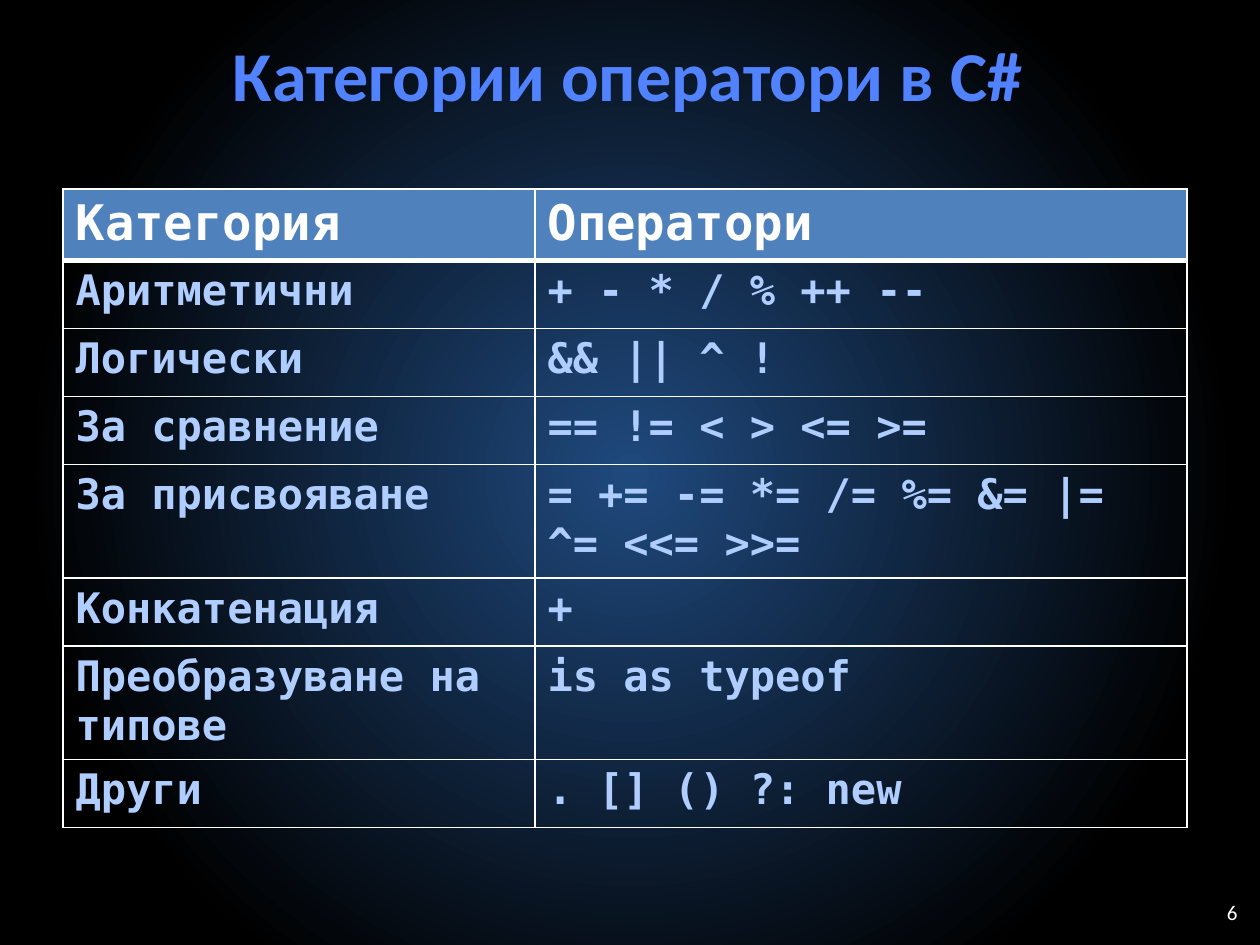
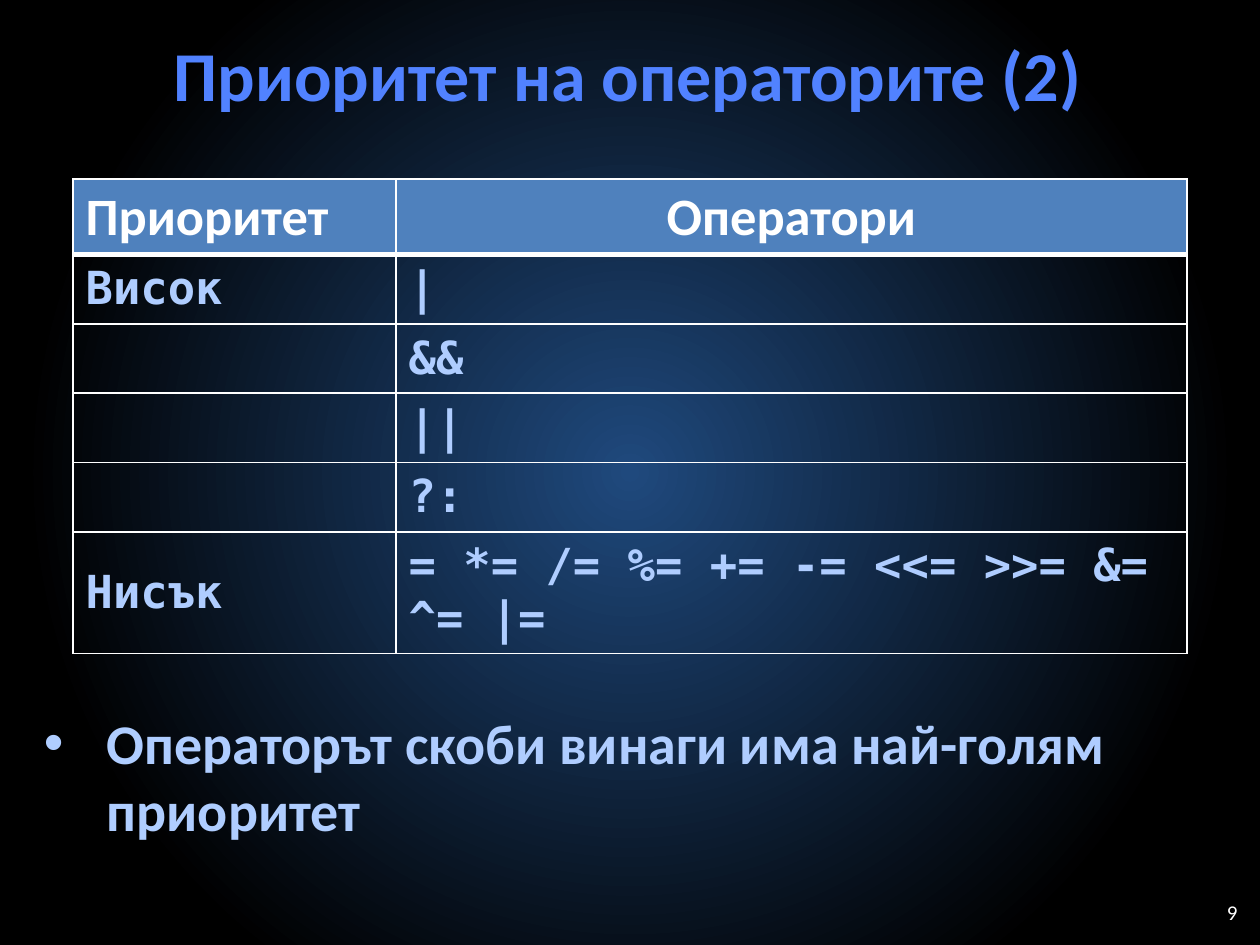
from lxml import etree
from pptx import Presentation
from pptx import util as u
from pptx.dml.color import RGBColor
from pptx.enum import text
from pptx.oxml.ns import qn

WIDTH, HEIGHT = 10, 7.5
COLOURS = {
    "glow": "1F497D", "edge": "000000", "title": "5182FF",
    "body": "AFCDFF", "white": "FFFFFF", "header": "4F81BD",
}
SANS, MONO = "Calibri", "DejaVu Sans Mono"
TITLE_ONLY = 5
LEFT, CENTRE, RIGHT = text.PP_ALIGN.LEFT, text.PP_ALIGN.CENTER, text.PP_ALIGN.RIGHT
TOP, MIDDLE = text.MSO_ANCHOR.TOP, text.MSO_ANCHOR.MIDDLE

# Boxes: left, top, width, height in inches
TITLE_BOX = (0.25, 0.17, 9.46, 0.83)
NUMBER_BOX = (9.5, 7.08, 0.42, 0.32)
NOTE_BOX = (0.25, 5.58, 9.46, 1.58)

CATEGORIES = [
    ("Категория", "Оператори"),
    ("Аритметични", "+ - * / % ++ --"),
    ("Логически", "&& || ^ !"),
    ("За сравнение", "== != < > <= >="),
    ("За присвояване", "= += -= *= /= %= &= |= ^= <<= >>="),
    ("Конкатенация", "+"),
    ("Преобразуване на типове", "is as typeof"),
    ("Други", ". [] () ?: new"),
]
PRIORITIES = [
    ("Приоритет", "Оператори"),
    ("Висок", "|"),
    ("", "&&"),
    ("", "||"),
    ("", "?:"),
    ("Нисък", "= *= /= %= += -= <<= >>= &= ^= |="),
]


def colour(name):
    return RGBColor.from_string(COLOURS[name])


def inches(box):
    return [u.Inches(length) for length in box]


def write(frame, words, size, font, tint, bold=True, align=LEFT):
    """Set the words of a frame and format its only paragraph."""
    frame.text = words
    para = frame.paragraphs[0]
    para.alignment = align
    for span in para.runs:
        span.font.size, span.font.name, span.font.bold = u.Pt(size), font, bold
        span.font.color.rgb = colour(tint)
    return para


def paint_background(master):
    """Give every slide a round glow that fades to the edges."""
    fill = master.background.fill
    fill.gradient()
    for stop, tint, position in zip(fill.gradient_stops, ("glow", "edge"), (0, 0.77)):
        stop.color.rgb = colour(tint)
        stop.position = position
    gradient = master.element.find(".//" + qn("a:gradFill"))
    gradient.remove(gradient.find(qn("a:lin")))
    circle = etree.SubElement(gradient, qn("a:path"))
    circle.set("path", "circle")
    centre = etree.SubElement(circle, qn("a:fillToRect"))
    for side in "ltrb":
        centre.set(side, "50000")


def add_text_box(page, box, anchor):
    frame = page.shapes.add_textbox(*inches(box)).text_frame
    frame.word_wrap = True
    frame.vertical_anchor = anchor
    return frame


def add_page(deck, title, number):
    page = deck.slides.add_slide(deck.slide_layouts[TITLE_ONLY])
    heading = page.shapes.title
    heading.left, heading.top, heading.width, heading.height = inches(TITLE_BOX)
    heading.text_frame.vertical_anchor = MIDDLE
    write(heading.text_frame, title, 40, SANS, "title", align=CENTRE)
    write(add_text_box(page, NUMBER_BOX, MIDDLE), str(number), 12, SANS, "white",
          bold=False, align=RIGHT)
    return page


def draw_borders(cell, bottom):
    """Rule all four sides in white; the bottom width is in points."""
    properties = cell._tc.get_or_add_tcPr()
    for place, (side, width) in enumerate(zip("LRTB", (1, 1, 1, bottom))):
        line = etree.Element(qn(f"a:ln{side}"), w=str(u.Pt(width)))
        fill = etree.SubElement(line, qn("a:solidFill"))
        etree.SubElement(fill, qn("a:srgbClr"), val=COLOURS["white"])
        properties.insert(place, line)


def add_grid(page, box, first_share, rows, header, size, anchor, first_height=None):
    """Place a two-column table; header is (size, font, alignments)."""
    left, top, width, row_height = box
    table = page.shapes.add_table(
        len(rows), 2, *inches((left, top, width, row_height * len(rows)))).table
    table.horz_banding = False
    for column, share in zip(table.columns, (first_share, 1 - first_share)):
        column.width = u.Inches(width * share)
    for row in table.rows:
        row.height = u.Inches(row_height)
    if first_height:
        table.rows[0].height = u.Inches(first_height)
    head_size, head_font, head_aligns = header
    for r, words in enumerate(rows):
        for c, word in enumerate(words):
            cell = table.cell(r, c)
            cell.vertical_anchor = anchor
            if r == 0:
                cell.fill.solid()
                cell.fill.fore_color.rgb = colour("header")
                write(cell.text_frame, word, head_size, head_font, "white",
                      align=head_aligns[c])
            else:
                cell.fill.background()
                write(cell.text_frame, word, size, MONO, "body")
            # The rule under the header is shared with the first body row
            draw_borders(cell, 3 if r == 0 else 1)
            if r == 1:
                cell._tc.tcPr.find(qn("a:lnT")).set("w", str(u.Pt(3)))


def add_note(page, box, words):
    """Add a bulleted remark with a hanging indent."""
    para = write(add_text_box(page, box, TOP), words, 32, SANS, "body")
    para.line_spacing = u.Pt(38)
    para.space_before = para.space_after = u.Pt(6)
    properties = para._p.get_or_add_pPr()
    properties.set("marL", str(u.Inches(0.5)))
    properties.set("indent", str(u.Inches(-0.5)))
    tint = etree.SubElement(properties, qn("a:buClr"))
    etree.SubElement(tint, qn("a:srgbClr"), val=COLOURS["body"])
    etree.SubElement(properties, qn("a:buFont"), typeface="Arial")
    etree.SubElement(properties, qn("a:buChar"), char="•")


def main():
    deck = Presentation()
    deck.slide_width, deck.slide_height = u.Inches(WIDTH), u.Inches(HEIGHT)
    paint_background(deck.slide_master)

    # Operator categories
    page = add_page(deck, "Категории оператори в C#", 6)
    add_grid(page, (0.5, 1.5, 8.92, 0.54), 0.42, CATEGORIES,
             (28, MONO, (LEFT, LEFT)), 24, TOP, first_height=0.15)

    # Operator priority
    page = add_page(deck, "Приоритет на операторите (2)", 9)
    add_grid(page, (0.58, 1.42, 8.84, 0.55), 0.29, PRIORITIES,
             (30, SANS, (LEFT, CENTRE)), 26, MIDDLE)
    add_note(page, NOTE_BOX, "Операторът скоби винаги има най-голям приоритет")

    deck.save("out.pptx")


if __name__ == "__main__":
    main()
